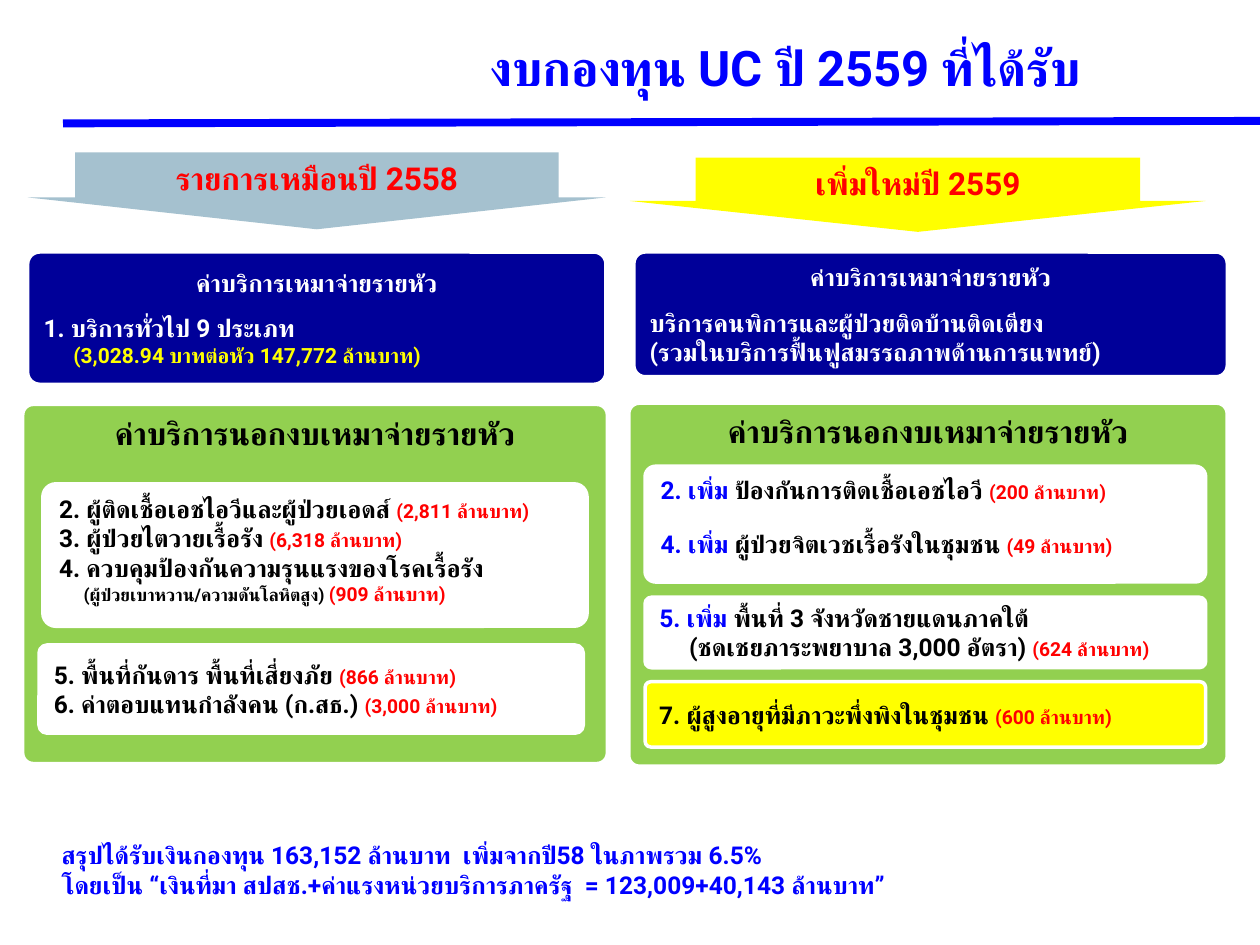
from dataclasses import dataclass
from typing import NamedTuple

from lxml.etree import SubElement
from pptx import Presentation
from pptx.dml.color import RGBColor
from pptx.enum.shapes import MSO_CONNECTOR as Connector, MSO_SHAPE as Preset
from pptx.enum.text import MSO_ANCHOR as Anchor, MSO_AUTO_SIZE as Fit, PP_ALIGN as Align
from pptx.oxml.ns import qn
from pptx.util import Pt


@dataclass(frozen=True)
class Theme:
    font: str = "Roboto"
    blue: str = "0000FF"
    navy: str = "000099"
    green: str = "92D050"
    steel: str = "A5C1CF"
    yellow: str = "FFFF00"
    white: str = "FFFFFF"
    black: str = "000000"
    red: str = "FF0000"
    title: float = 28
    heading: float = 18
    body: float = 14
    detail: float = 12
    amount: float = 11
    small: float = 10


THEME = Theme()


class Span(NamedTuple):
    text: str
    color: str = THEME.black
    size: float = THEME.body


class Para(NamedTuple):
    spans: list[Span]
    align: Align = Align.LEFT
    indent: float = 0
    before: float = 0


class Box(NamedTuple):
    left: float
    top: float
    width: float
    height: float


class Card(NamedTuple):
    box: Box
    fill: str
    paras: list[Para]
    anchor: Anchor = Anchor.MIDDLE
    preset: Preset = Preset.ROUNDED_RECTANGLE
    adjust: tuple[float, ...] = (0.091,)
    outline: bool = True


def add_span(para, text: str, *, color: str, size: float) -> None:
    span = para.add_run()
    span.text = text
    font = span.font
    font.name, font.size, font.bold = THEME.font, Pt(size), True
    font.color.rgb = RGBColor.from_string(color)
    SubElement(font._element, qn("a:cs")).set("typeface", THEME.font)


def write(frame, paras: list[Para], anchor: Anchor) -> None:
    frame.word_wrap = True
    frame.auto_size = Fit.NONE
    frame.vertical_anchor = anchor
    for index, item in enumerate(paras):
        para = frame.add_paragraph() if index else frame.paragraphs[0]
        para.alignment = item.align
        para.space_before = Pt(item.before)
        if item.indent:
            para._p.get_or_add_pPr().set("marL", str(Pt(item.indent)))
        for span in item.spans:
            add_span(para, span.text, color=span.color, size=span.size)


def draw_card(page, card: Card) -> None:
    shape = page.shapes.add_shape(card.preset, *map(Pt, card.box))
    for index, value in enumerate(card.adjust):
        shape.adjustments[index] = value
    shape.shadow.inherit = False
    shape.fill.solid()
    shape.fill.fore_color.rgb = RGBColor.from_string(card.fill)
    if card.outline:
        shape.line.color.rgb = RGBColor.from_string(THEME.white)
        shape.line.width = Pt(2)
    else:
        shape.line.fill.background()
    write(shape.text_frame, card.paras, card.anchor)


def draw_rule(page) -> None:
    rule = page.shapes.add_connector(Connector.STRAIGHT, Pt(36), Pt(70.5), Pt(720), Pt(69.1))
    rule.line.color.rgb = RGBColor.from_string(THEME.blue)
    rule.line.width = Pt(4.5)
    SubElement(rule._element.spPr, qn("a:effectLst"))


def draw_title(page, text: str) -> None:
    title = page.shapes.title
    title.left, title.top, title.width, title.height = map(Pt, (36, 15.8, 589, 44.6))
    write(title.text_frame, [Para([Span(text, THEME.blue, THEME.title)], Align.RIGHT)], Anchor.MIDDLE)


def draw_summary(page, lines: list[str]) -> None:
    box = page.shapes.add_textbox(Pt(28.1), Pt(476.6), Pt(679), Pt(41))
    write(box.text_frame, [Para([Span(line, THEME.blue)]) for line in lines], Anchor.TOP)


def amount(value: str) -> Span:
    return Span(f"({value} ล้านบาท)", THEME.red, THEME.amount)


def white(text: str, before: float = 0) -> Para:
    return Para([Span(text, THEME.white)], before=before)


def added(number: int, *spans: Span, before: float = 0) -> Para:
    return Para([Span(f"{number}. เพิ่ม ", THEME.blue), *spans], before=before)


def arrow(box: Box, fill: str, text: str, shaft: float, anchor: Anchor) -> Card:
    heading = Para([Span(text, THEME.red, THEME.heading)], Align.CENTER)
    return Card(box, fill, [heading], anchor, Preset.DOWN_ARROW, (shaft, 0.415), False)


def panel(box: Box) -> Card:
    heading = Para([Span("ค่าบริการนอกงบเหมาจ่ายรายหัว", size=THEME.heading)], Align.CENTER)
    return Card(box, THEME.green, [heading], Anchor.TOP, adjust=(0.029,))


def capitation(box: Box, paras: list[Para]) -> Card:
    heading = Para([Span("ค่าบริการเหมาจ่ายรายหัว", THEME.white)], Align.CENTER)
    return Card(box, THEME.navy, [heading, *paras])


RIGHT, RIGHT_WIDTH = 368.6, 320.4

CARDS = [
    capitation(Box(15.8, 144, 330.5, 75.6), [
        white("1. บริการทั่วไป 9 ประเภท", 9),
        Para([Span("(3,028.94 บาทต่อหัว 147,772 ล้านบาท)", THEME.yellow, THEME.detail)], indent=17),
    ]),
    panel(Box(13, 231.1, 334.1, 205.2)),
    Card(Box(22.3, 368.6, 311, 50.4), THEME.white, [
        Para([Span("5. พื้นที่กันดาร พื้นที่เสี่ยงภัย "), amount("866")]),
        Para([Span("6. ค่าตอบแทนกำลังคน (ก.สธ.) "), amount("3,000")]),
    ]),
    Card(Box(24.5, 276.5, 311, 81.4), THEME.white, [
        Para([Span("2. ผู้ติดเชื้อเอชไอวีและผู้ป่วยเอดส์ "), amount("2,811")]),
        Para([Span("3. ผู้ป่วยไตวายเรื้อรัง "), amount("6,318")]),
        Para([Span("4. ควบคุมป้องกันความรุนแรงของโรคเรื้อรัง")]),
        Para([Span("(ผู้ป่วยเบาหวาน/ความดันโลหิตสูง) ", size=THEME.small), amount("909")], indent=14),
    ], Anchor.TOP),
    arrow(Box(15.8, 87.1, 330.5, 43.9), THEME.steel, "รายการเหมือนปี 2558", 0.836, Anchor.MIDDLE),
    arrow(Box(360, 90, 329, 42.5), THEME.yellow, "เพิ่มใหม่ปี 2559", 0.772, Anchor.TOP),
    panel(Box(359.3, 230.4, 342, 207.4)),
    Card(Box(RIGHT, 389.5, RIGHT_WIDTH, 37.4), THEME.yellow, [
        Para([Span("7. ผู้สูงอายุที่มีภาวะพึ่งพิงในชุมชน "), amount("600")]),
    ]),
    Card(Box(RIGHT, 341.3, RIGHT_WIDTH, 40.3), THEME.white, [
        added(5, Span("พื้นที่ 3 จังหวัดชายแดนภาคใต้")),
        Para([Span("(ชดเชยภาระพยาบาล 3,000 อัตรา) "), amount("624")], indent=17),
    ]),
    Card(Box(RIGHT, 266.4, RIGHT_WIDTH, 66.2), THEME.white, [
        added(2, Span("ป้องกันการติดเชื้อเอชไอวี "), amount("200")),
        added(4, Span("ผู้ป่วยจิตเวชเรื้อรังในชุมชน "), amount("49"), before=14),
    ], Anchor.TOP),
    capitation(Box(362.2, 144, 339.1, 71.3), [
        white("บริการคนพิการและผู้ป่วยติดบ้านติดเตียง", 9),
        white("(รวมในบริการฟื้นฟูสมรรถภาพด้านการแพทย์)"),
    ]),
]

SUMMARY = [
    "สรุปได้รับเงินกองทุน 163,152 ล้านบาท  เพิ่มจากปี58 ในภาพรวม 6.5%",
    "โดยเป็น “เงินที่มา สปสช.+ค่าแรงหน่วยบริการภาครัฐ  = 123,009+40,143 ล้านบาท”",
]


def main() -> None:
    deck = Presentation()
    deck.slide_width, deck.slide_height = Pt(720), Pt(540)
    page = deck.slides.add_slide(deck.slide_layouts[5])
    draw_rule(page)
    draw_title(page, "งบกองทุน UC ปี 2559 ที่ได้รับ")
    for card in CARDS:
        draw_card(page, card)
    draw_summary(page, SUMMARY)
    deck.save("out.pptx")


if __name__ == "__main__":
    main()
